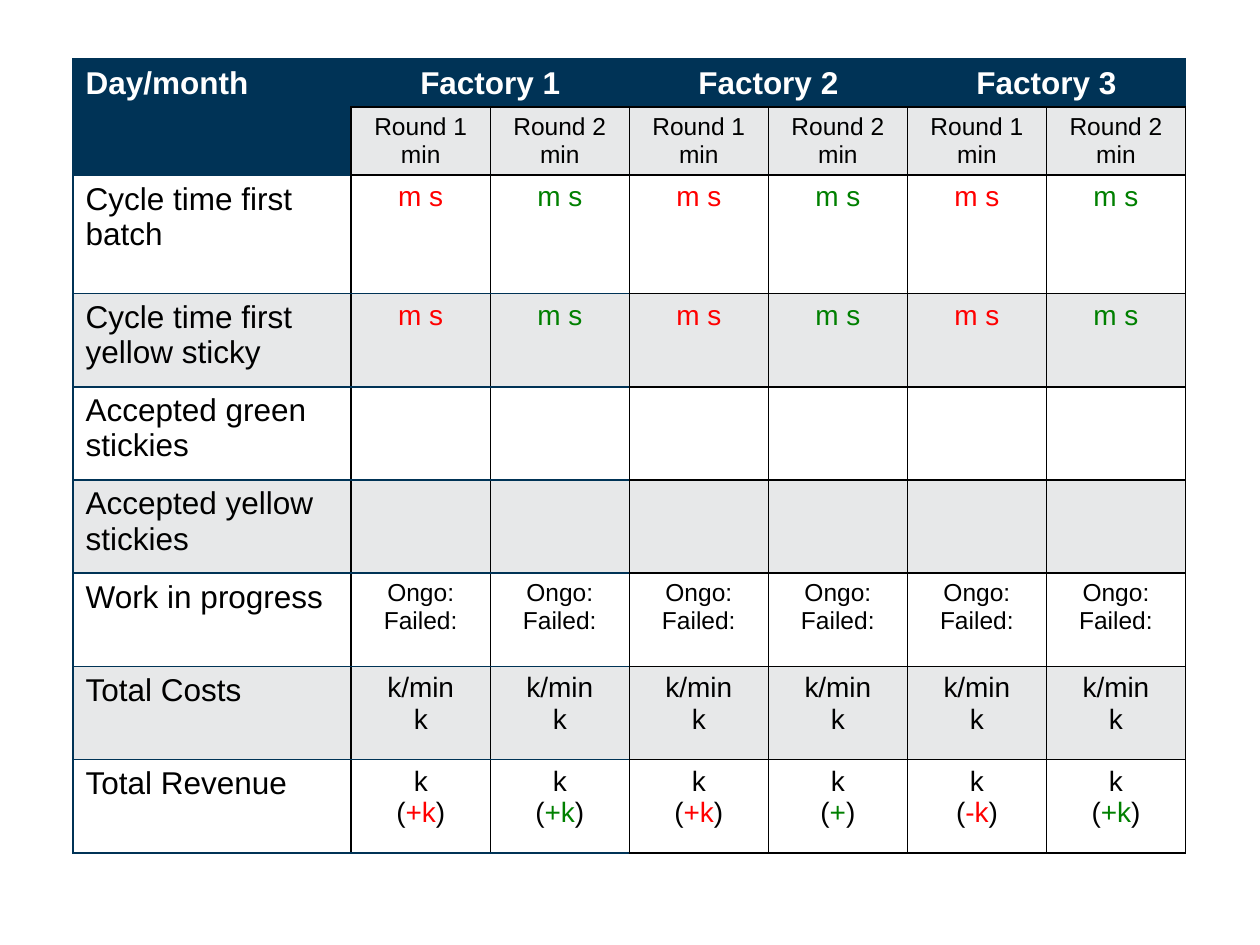
from dataclasses import dataclass

from lxml import etree
from pptx import Presentation, util as u
from pptx.dml.color import RGBColor
from pptx.enum import text
from pptx.oxml.ns import qn


@dataclass(frozen=True)
class Theme:
    font: str = "Arial"
    navy: str = "003356"
    black: str = "000000"
    white: str = "FFFFFF"
    band: str = "E7E8E9"
    red: str = "FF0000"
    green: str = "008000"
    label: int = 18
    value: int = 16
    small: int = 14


theme = Theme()


def write(cell, lines, size, bold=False, centred=True):
    """Fill a cell; each line is a list of (wording, colour) runs."""
    for number, line in enumerate(lines):
        frame = cell.text_frame
        paragraph = frame.add_paragraph() if number else frame.paragraphs[0]
        if centred:
            paragraph.alignment = text.PP_ALIGN.CENTER
        for wording, colour in line:
            run = paragraph.add_run()
            run.text = wording
            run.font.name, run.font.size, run.font.bold = theme.font, u.Pt(size), bold
            run.font.color.rgb = RGBColor.from_string(colour)


def paint(cell, fill, **borders):
    """Set the fill and the L, R, T and B border colours of a cell."""
    properties = cell._tc.get_or_add_tcPr()
    for side in "LRTB":
        border = etree.SubElement(properties, qn(f"a:ln{side}"), w=str(u.Pt(1)))
        solid = etree.SubElement(border, qn("a:solidFill"))
        etree.SubElement(solid, qn("a:srgbClr"), val=borders.get(side, theme.black))
    cell.fill.solid()
    cell.fill.fore_color.rgb = RGBColor.from_string(fill)


labels = ["Cycle time first batch", "Cycle time first yellow sticky",
          "Accepted green stickies", "Accepted yellow stickies",
          "Work in progress", "Total Costs", "Total Revenue"]
revenue_changes = ["+k", "+k", "+k", "+", "-k", "+k"]
factories, rounds = 3, 2
header_rows = 2
row_heights = [0.38, 0.54, 0.94] + [0.74] * 6

deck = Presentation()
deck.slide_width, deck.slide_height = u.Inches(10), u.Inches(7.5)
slide = deck.slides.add_slide(deck.slide_layouts[6])

# The label column is two units wide, each round column one unit
table_width = 8.83
unit = table_width / (2 + factories * rounds)
results = slide.shapes.add_table(
    header_rows + len(labels), 1 + factories * rounds,
    u.Inches(0.58), u.Inches(0.47), u.Inches(table_width),
    u.Inches(sum(row_heights))).table
results.first_row = results.horz_banding = False
for index, column in enumerate(results.columns):
    column.width = u.Inches(unit if index else 2 * unit)
for row, height in zip(results.rows, row_heights):
    row.height = u.Inches(height)

# Fills and borders
navy_sides = dict.fromkeys("LRT", theme.navy)
for row in range(len(results.rows)):
    for column in range(len(results.columns)):
        cell = results.cell(row, column)
        if row == 0:
            paint(cell, theme.navy, **navy_sides,
                  B=theme.black if column else theme.navy)
        elif row == 1 and column == 0:
            paint(cell, theme.navy, L=theme.navy, T=theme.navy, B=theme.navy)
        elif row == 1:
            paint(cell, theme.band)
        else:
            # Rules under the labels and the first factory are navy
            rule = theme.navy if column <= rounds else theme.black
            top = theme.black if row == header_rows and column else rule
            paint(cell, theme.band if row % 2 else theme.white, T=top, B=rule,
                  L=theme.black if column else theme.navy)

# Headings
results.cell(0, 0).merge(results.cell(1, 0))
write(results.cell(0, 0), [[("Day/month", theme.white)]], theme.label,
      bold=True, centred=False)
for factory in range(factories):
    first = 1 + factory * rounds
    results.cell(0, first).merge(results.cell(0, first + rounds - 1))
    write(results.cell(0, first), [[(f"Factory {factory + 1}", theme.white)]],
          theme.label, bold=True)

for row, label in enumerate(labels, header_rows):
    write(results.cell(row, 0), [[(label, theme.black)]], theme.label, centred=False)

# Values of each round
for column, change in enumerate(revenue_changes, 1):
    round_number = (column - 1) % rounds + 1
    accent = theme.red if round_number == 1 else theme.green
    black = theme.black
    cycle_time = [[("m s", accent)]]
    entries = {
        1: ([[(f"Round {round_number}", black)], [("min", black)]], theme.small),
        2: (cycle_time, theme.value),
        3: (cycle_time, theme.value),
        6: ([[("Ongo:", black)], [("Failed:", black)]], theme.small),
        7: ([[("k/min", black)], [("k", black)]], theme.value),
        8: ([[("k", black)], [("(", black), (change, accent), (")", black)]],
            theme.value),
    }
    for row, (lines, size) in entries.items():
        write(results.cell(row, column), lines, size)

deck.save("out.pptx")
